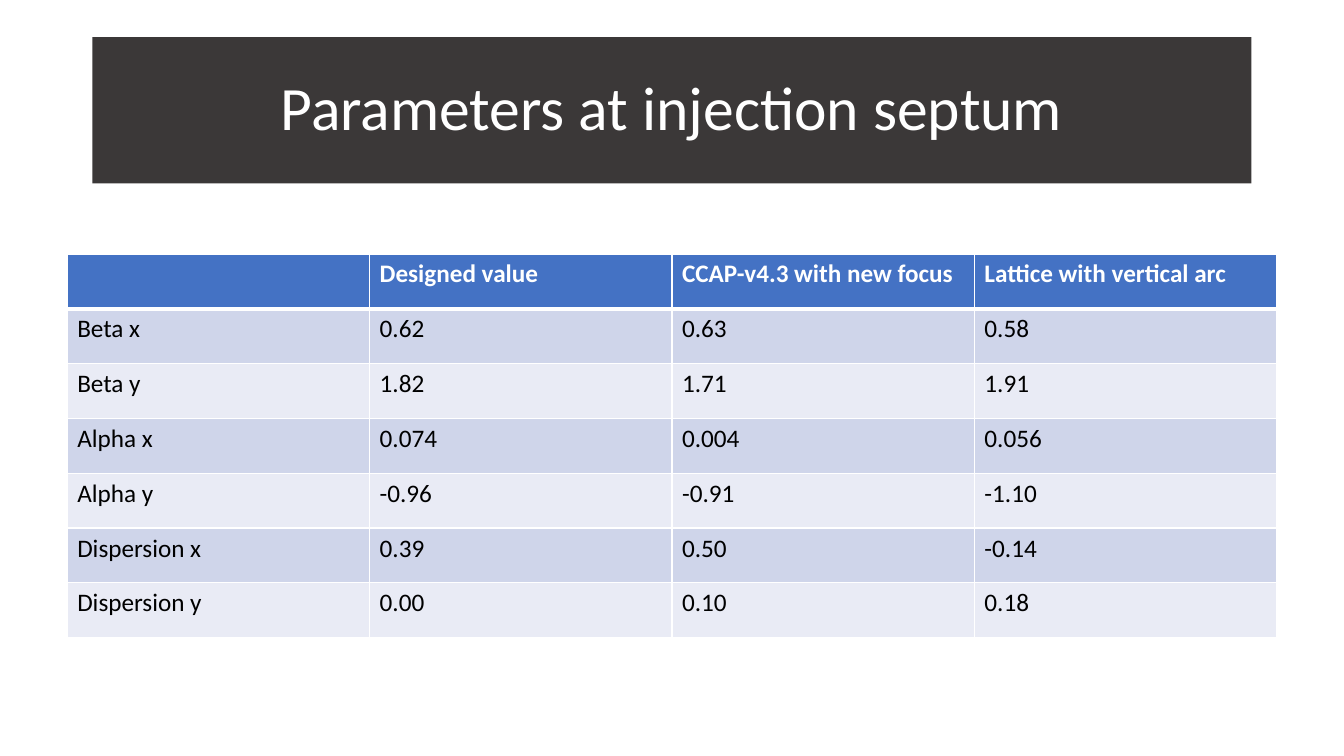
from dataclasses import dataclass

import pptx
import pptx.dml.color
import pptx.enum.shapes
import pptx.enum.text
import pptx.oxml
import pptx.oxml.ns
import pptx.util

Pt = pptx.util.Pt


@dataclass(frozen=True)
class Theme:
    font: str = "Calibri"
    title_size: float = 44
    table_size: float = 18
    light: str = "FFFFFF"
    dark: str = "000000"
    banner: str = "3B3838"
    header: str = "4472C4"
    bands: tuple = ("CFD5EA", "E9EBF5")
    thin: float = 1
    thick: float = 3


class SlideBuilder:
    def __init__(self, slide, theme):
        self.slide = slide
        self.theme = theme

    def fill(self, target, color):
        target.fill.solid()
        target.fill.fore_color.rgb = pptx.dml.color.RGBColor.from_string(color)

    def format_text(self, paragraph, size, color, bold=False):
        # An empty paragraph has no runs, so its own font carries the size
        for item in paragraph.runs or [paragraph]:
            item.font.name = self.theme.font
            item.font.size = Pt(size)
            item.font.bold = bold
            item.font.color.rgb = pptx.dml.color.RGBColor.from_string(color)

    def add_banner(self, text, left, top, width, height):
        shape = self.slide.shapes.add_shape(
            pptx.enum.shapes.MSO_SHAPE.RECTANGLE,
            Pt(left), Pt(top), Pt(width), Pt(height))
        shape.shadow.inherit = False
        self.fill(shape, self.theme.banner)
        shape.line.fill.background()
        text_frame = shape.text_frame
        text_frame.text = text
        text_frame.word_wrap = True
        text_frame.vertical_anchor = pptx.enum.text.MSO_ANCHOR.MIDDLE
        paragraph = text_frame.paragraphs[0]
        paragraph.alignment = pptx.enum.text.PP_ALIGN.CENTER
        paragraph.line_spacing = 0.9
        self.format_text(paragraph, self.theme.title_size, self.theme.light)

    def set_borders(self, cell, widths):
        properties = cell._tc.get_or_add_tcPr()
        for position, (side, width) in enumerate(widths.items()):
            border = pptx.oxml.parse_xml(
                f'<a:ln{side} {pptx.oxml.ns.nsdecls("a")} w="{Pt(width)}">'
                f'<a:solidFill><a:srgbClr val="{self.theme.light}"/></a:solidFill>'
                f'</a:ln{side}>')
            properties.insert(position, border)

    def add_table(self, rows, left, top, column_width, row_height):
        theme = self.theme
        column_count = len(rows[0])
        table = self.slide.shapes.add_table(
            len(rows), column_count, Pt(left), Pt(top),
            Pt(column_width * column_count), Pt(row_height * len(rows))).table
        for column in table.columns:
            column.width = Pt(column_width)
        for row_index, values in enumerate(rows):
            is_header = row_index == 0
            band = theme.bands[(row_index - 1) % len(theme.bands)]
            # The rule below the header is shared by the first two rows
            widths = {"L": theme.thin, "R": theme.thin,
                      "T": theme.thick if row_index == 1 else theme.thin,
                      "B": theme.thick if is_header else theme.thin}
            for column_index, value in enumerate(values):
                cell = table.cell(row_index, column_index)
                cell.text_frame.text = value
                self.format_text(cell.text_frame.paragraphs[0], theme.table_size,
                                 theme.light if is_header else theme.dark, is_header)
                self.fill(cell, theme.header if is_header else band)
                self.set_borders(cell, widths)
            table.rows[row_index].height = Pt(row_height)


PARAMETERS = [
    ("", "Designed value", "CCAP-v4.3 with new focus", "Lattice with vertical arc"),
    ("Beta x", "0.62", "0.63", "0.58"),
    ("Beta y", "1.82", "1.71", "1.91"),
    ("Alpha x", "0.074", "0.004", "0.056"),
    ("Alpha y", "-0.96", "-0.91", "-1.10"),
    ("Dispersion x", "0.39", "0.50", "-0.14"),
    ("Dispersion y", "0.00", "0.10", "0.18"),
]


def main():
    presentation = pptx.Presentation()
    presentation.slide_width = Pt(960)
    presentation.slide_height = Pt(540)
    slide = presentation.slides.add_slide(presentation.slide_layouts[6])
    builder = SlideBuilder(slide, Theme())

    # Title banner
    builder.add_banner("Parameters at injection septum", 66, 26.6, 828, 104.4)

    # Parameter table
    builder.add_table(PARAMETERS, left=48, top=181.4, column_width=216, row_height=39.15)

    presentation.save("out.pptx")


if __name__ == "__main__":
    main()
